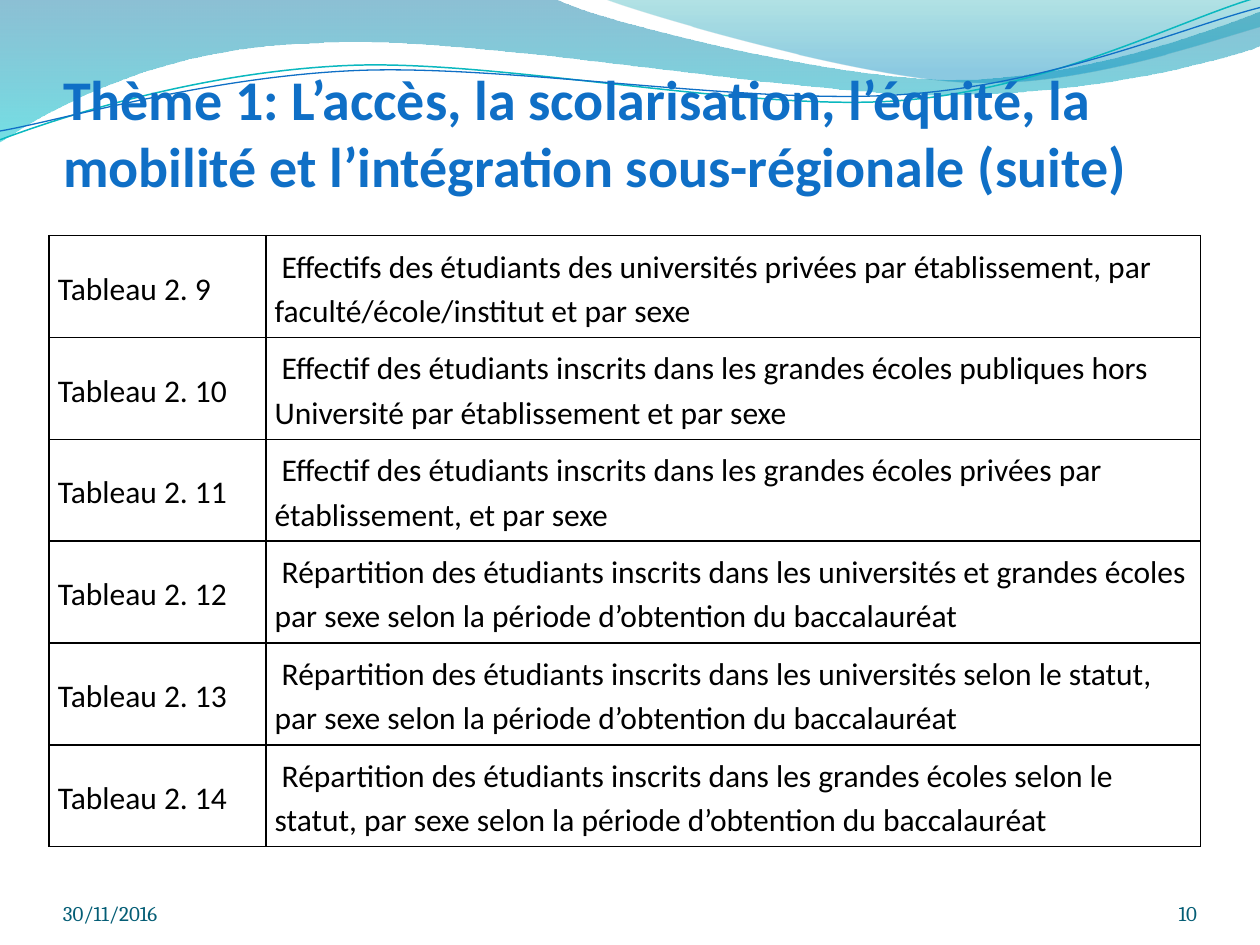
from dataclasses import dataclass

from lxml import etree
from pptx import Presentation
from pptx import util as u
from pptx.dml.color import RGBColor
from pptx.enum import text
from pptx.oxml.ns import qn


@dataclass(frozen=True)
class Theme:
    head: str = "0F6FC6"
    ink: str = "000000"
    foot: str = "045D75"
    teal: str = "0AB8BF"
    sans: str = "Calibri"
    serif: str = "Cambria"
    big: int = 32
    body: int = 18
    small: int = 12


THEME = Theme()

# Each wave is a start point, then steps: 2 numbers for a line, 6 for a curve.
# Gradient stops are (position, colour, opacity in percent).
BANDS = [
    ([(0, 0), (4.4, -0.01), (4.76, 0.17, 6.64, 0.63, 7.58, 0.63),
      (8.53, 0.63, 9.58, 0.26, 10, 0.09), (10.01, 0.36),
      (9.83, 0.44, 8.7, 0.76, 7.46, 0.75), (6.22, 0.75, 3.82, 0.28, 2.57, 0.34),
      (1.29, 0.36, 0.46, 0.83, -0.01, 1.13), (0, 0)],
     [(0, "0074A1", 45), (1, "00C6CF", 55)]),
    ([(4.79, -0.01), (5.09, 0.11, 6.82, 0.62, 7.69, 0.65),
      (8.56, 0.69, 9.61, 0.32, 10, 0.21), (10, 0), (4.79, -0.01)],
     [(0, "00A1A9", 30), (0.8, "008BBF", 45)]),
]
LINES = [
    ([(0, 1.11), (0.48, 0.93, 1.58, 0.57, 2.77, 0.52),
      (3.95, 0.47, 5.93, 0.89, 7.13, 0.8), (8.33, 0.71, 9.38, 0.15, 9.98, -0.02)],
     THEME.teal, 0.85),
    ([(0, 1.04), (0.47, 0.96, 1.64, 0.61, 2.83, 0.56),
      (4.03, 0.51, 5.97, 0.84, 7.17, 0.75), (8.36, 0.67, 9.41, 0.21, 10, 0.06)],
     THEME.head, 0.75),
]

TITLE = ("Thème 1: L’accès, la scolarisation, l’équité, la mobilité "
         "et l’intégration sous-régionale (suite)")
FIRST = 9
TOPICS = [
    "Effectifs des étudiants des universités privées par établissement, "
    "par faculté/école/institut et par sexe",
    "Effectif des étudiants inscrits dans les grandes écoles publiques "
    "hors Université par établissement et par sexe",
    "Effectif des étudiants inscrits dans les grandes écoles privées "
    "par établissement, et par sexe",
    "Répartition des étudiants inscrits dans les universités et grandes écoles "
    "par sexe selon la période d’obtention du baccalauréat",
    "Répartition des étudiants inscrits dans les universités selon le statut, "
    "par sexe selon la période d’obtention du baccalauréat",
    "Répartition des étudiants inscrits dans les grandes écoles selon le statut, "
    "par sexe selon la période d’obtention du baccalauréat",
]


def box(*sizes):
    return tuple(u.Inches(size) for size in sizes)


def style(para, font, size, color, bold=False):
    for run in para.runs:
        run.font.name = font
        run.font.size = u.Pt(size)
        run.font.bold = bold
        run.font.color.rgb = RGBColor.from_string(color)


def inset(part, left, top, right, bottom):
    part.margin_left, part.margin_top, part.margin_right, part.margin_bottom = box(
        left, top, right, bottom)


def bend(shape, steps):
    """Merge the three line segments of each curved step into one curve."""
    legs = iter(list(shape.element.iter(qn("a:lnTo"))))
    for step in steps:
        first = next(legs)
        if len(step) == 6:
            first.tag = qn("a:cubicBezTo")
            for leg in (next(legs), next(legs)):
                first.append(leg[0])
                leg.getparent().remove(leg)


def outline(slide, wave, close, left, top):
    points = [box(*step[i:i + 2]) for step in wave for i in range(0, len(step), 2)]
    form = slide.shapes.build_freeform(*points[0], scale=1.0)
    form.add_line_segments(points[1:], close=close)
    shape = form.convert_to_shape(left, top)
    bend(shape, wave[1:])
    shape.shadow.inherit = False
    return shape


def add_waves(slide, left, top):
    for wave, stops in BANDS:
        shape = outline(slide, wave, True, left, top)
        shape.line.fill.background()
        shape.fill.gradient()
        shape.fill.gradient_angle = 270
        for stop, (place, color, _) in zip(shape.fill.gradient_stops, stops):
            stop.position = place
            stop.color.rgb = RGBColor.from_string(color)
        tints = shape.element.spPr.iter(qn("a:srgbClr"))
        for tint, (_, _, alpha) in zip(tints, stops):
            etree.SubElement(tint, qn("a:alpha"), val=str(alpha * 1000))
    for wave, color, width in LINES:
        shape = outline(slide, wave, False, left, top)
        shape.fill.background()
        shape.line.color.rgb = RGBColor.from_string(color)
        shape.line.width = u.Pt(width)


def set_title(slide, left, top, width, height):
    title = slide.shapes.title
    title.left, title.top, title.width, title.height = left, top, width, height
    frame = title.text_frame
    frame.text = TITLE
    frame.word_wrap = True
    frame.auto_size = text.MSO_AUTO_SIZE.NONE
    frame.vertical_anchor = text.MSO_ANCHOR.BOTTOM
    inset(frame, 0, 0.05, 0, 0)
    para = frame.paragraphs[0]
    para.alignment = text.PP_ALIGN.LEFT
    style(para, THEME.sans, THEME.big, THEME.head, True)
    slide.shapes.element.append(title.element)  # in front of the waves


def frame_cell(cell):
    props = cell._tc.get_or_add_tcPr()
    for side in ("lnL", "lnR", "lnT", "lnB"):
        line = etree.SubElement(props, qn("a:" + side), w=str(u.Pt(1)))
        fill = etree.SubElement(line, qn("a:solidFill"))
        etree.SubElement(fill, qn("a:srgbClr"), val=THEME.ink)
    cell.fill.background()


def add_topics(slide, left, top, width, height):
    table = slide.shapes.add_table(len(TOPICS), 2, left, top, width, height).table
    table.first_row = table.horz_banding = False
    table.columns[0].width = u.Inches(1.72)
    table.columns[1].width = width - u.Inches(1.72)
    for row, topic in enumerate(TOPICS):
        for col, words in enumerate((f"Tableau 2. {FIRST + row}", " " + topic)):
            cell = table.cell(row, col)
            cell.text_frame.text = words
            cell.vertical_anchor = text.MSO_ANCHOR.MIDDLE
            inset(cell, 0.07, 0, 0.07, 0)
            para = cell.text_frame.paragraphs[0]
            para.line_spacing = 1.15
            style(para, THEME.sans, THEME.body, THEME.ink)
            frame_cell(cell)


def add_note(slide, words, align, left, top, width, height):
    frame = slide.shapes.add_textbox(left, top, width, height).text_frame
    frame.text = words
    frame.word_wrap = True
    frame.vertical_anchor = text.MSO_ANCHOR.BOTTOM
    inset(frame, 0, 0, 0, 0)
    para = frame.paragraphs[0]
    para.alignment = align
    style(para, THEME.serif, THEME.small, THEME.foot)


def main():
    deck = Presentation()
    deck.slide_width, deck.slide_height = box(10, 7.5)
    slide = deck.slides.add_slide(deck.slide_layouts.get_by_name("Title Only"))
    add_waves(slide, *box(0, 0))
    set_title(slide, *box(0.5, 0.33, 9, 1.25))
    add_topics(slide, *box(0.39, 1.87, 9.14, 4.85))
    add_note(slide, "10", text.PP_ALIGN.RIGHT, *box(8.67, 6.95, 0.83, 0.4))
    add_note(slide, "30/11/2016", text.PP_ALIGN.LEFT, *box(0.5, 6.95, 2.33, 0.4))
    deck.save("out.pptx")


if __name__ == "__main__":
    main()
